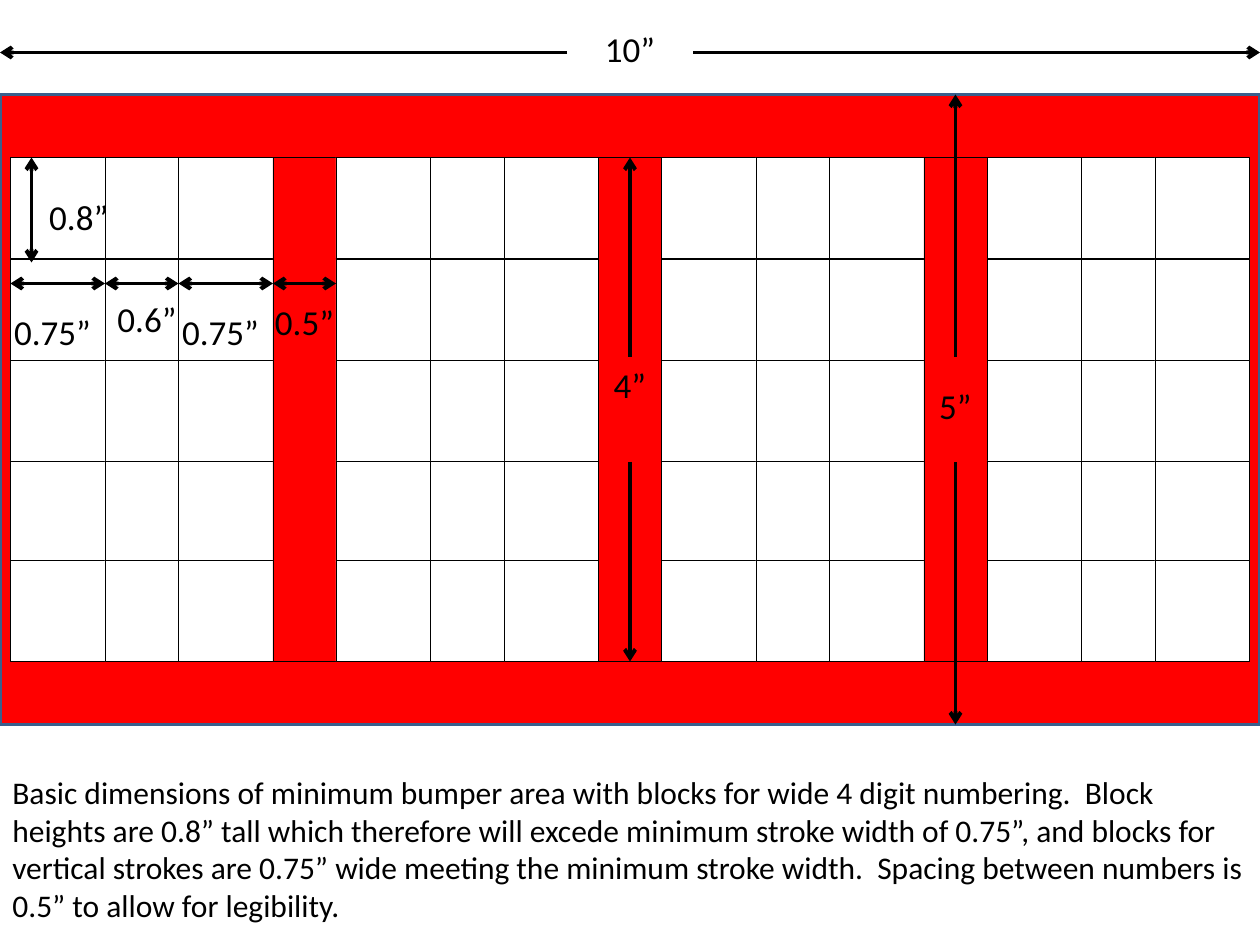
import pptx
import pptx.util
import pptx.dml.color
import pptx.enum.shapes
import pptx.enum.text
import pptx.oxml.ns
import lxml.etree

RGB = pptx.dml.color.RGBColor
RED = RGB(0xFF, 0x00, 0x00)
WHITE = RGB(0xFF, 0xFF, 0xFF)
BLACK = RGB(0x00, 0x00, 0x00)
BLUE = RGB(0x3A, 0x5F, 0x8C)

PX = 914400 // 120  # 120 px to the inch
ALIGN = pptx.enum.text.PP_ALIGN


class Diagram:
    """Holds the text style and the current slide; lengths are in px."""

    font = {"name": "Calibri"}

    def __init__(self, slide):
        self.slide = slide

    def rect(self, x, y, w, h, fill, line=BLACK, weight=0.25):
        sp = self.slide.shapes.add_shape(
            pptx.enum.shapes.MSO_SHAPE.RECTANGLE, x * PX, y * PX, w * PX, h * PX)
        sp.shadow.inherit = False
        sp.fill.solid()
        sp.fill.fore_color.rgb = fill
        sp.line.color.rgb = line
        sp.line.width = pptx.util.Pt(weight)

    def arrow(self, x1, y1, x2, y2):
        sp = self.slide.shapes.add_connector(
            pptx.enum.shapes.MSO_CONNECTOR.STRAIGHT, x1 * PX, y1 * PX, x2 * PX, y2 * PX)
        sp.line.color.rgb = BLACK
        sp.line.width = pptx.util.Pt(2.25)
        qn = pptx.oxml.ns.qn
        lxml.etree.SubElement(sp.line._get_or_add_ln(), qn("a:tailEnd"), type="arrow")
        lxml.etree.SubElement(sp._element.spPr, qn("a:effectLst"))

    def text(self, x, y, w, text, h=53, size=20, align=ALIGN.CENTER):
        sp = self.slide.shapes.add_textbox(x * PX, y * PX, w * PX, h * PX)
        tf = sp.text_frame
        tf.word_wrap = True
        tf.auto_size = pptx.enum.text.MSO_AUTO_SIZE.SHAPE_TO_FIT_TEXT
        p = tf.paragraphs[0]
        p.alignment = align
        r = p.add_run()
        r.text = text
        for key, value in {**self.font, "size": pptx.util.Pt(size)}.items():
            setattr(r.font, key, value)
        r.font.color.rgb = BLACK


# Digit grid: three columns by five rows, with a gap after each digit
DIGITS = 4
DIGIT_PITCH = 310
COLUMNS = ((10, 90), (100, 72), (170, 90))
ROW_TOPS = (150, 247, 343, 439, 534)
BLOCK_HEIGHT = 96
GAP_LEFT, GAP_WIDTH = 260, 60

# Each dimension: label, label left, top and width, then its two arrows
DIMENSIONS = (
    ("4”", (570, 340, 60), ((600, 340, 600, 150), (600, 440, 600, 630))),
    ("0.8”", (30, 180, 90), ((30, 206, 30, 150), (30, 206, 30, 250))),
    ("0.75”", (160, 290, 100), ((210, 270, 260, 270), (210, 270, 170, 270))),
    ("0.6”", (90, 277, 100), ((140, 270, 170, 270), (140, 270, 100, 270))),
    ("0.75”", (0, 290, 100), ((50, 270, 100, 270), (50, 270, 10, 270))),
    ("0.5”", (240, 280, 100), ((290, 270, 320, 270), (300, 270, 260, 270))),
    ("10”", (550, 20, 100), ((660, 50, 1200, 50), (540, 50, 0, 50))),
    ("5”", (880, 360, 60), ((910, 340, 910, 90), (910, 440, 910, 690))),
)

CAPTION = (
    "Basic dimensions of minimum bumper area with blocks for wide 4 digit numbering.  "
    "Block heights are 0.8” tall which therefore will excede minimum stroke width of "
    "0.75”, and blocks for vertical strokes are 0.75” wide meeting the minimum stroke "
    "width.  Spacing between numbers is 0.5” to allow for legibility."
)


def main():
    prs = pptx.Presentation()
    prs.slide_width, prs.slide_height = 1200 * PX, 900 * PX
    s = prs.slides.add_slide(prs.slide_layouts[6])
    d = Diagram(s)

    # Bumper area
    d.rect(0, 90, 1200, 600, RED, BLUE, 2)

    # Digit blocks and the gaps between digits
    for digit in range(DIGITS):
        left = digit * DIGIT_PITCH
        for x, width in COLUMNS:
            for top in ROW_TOPS:
                d.rect(left + x, top, width, BLOCK_HEIGHT, WHITE)
        if digit < DIGITS - 1:
            d.rect(left + GAP_LEFT, ROW_TOPS[0], GAP_WIDTH, 480, RED)

    # Dimension arrows and labels
    for label, box, arrows in DIMENSIONS:
        for ends in arrows:
            d.arrow(*ends)
        d.text(*box, label)

    # Caption
    d.text(0, 730, 1200, CAPTION, h=157, size=18, align=ALIGN.LEFT)

    prs.save("out.pptx")


if __name__ == "__main__":
    main()
